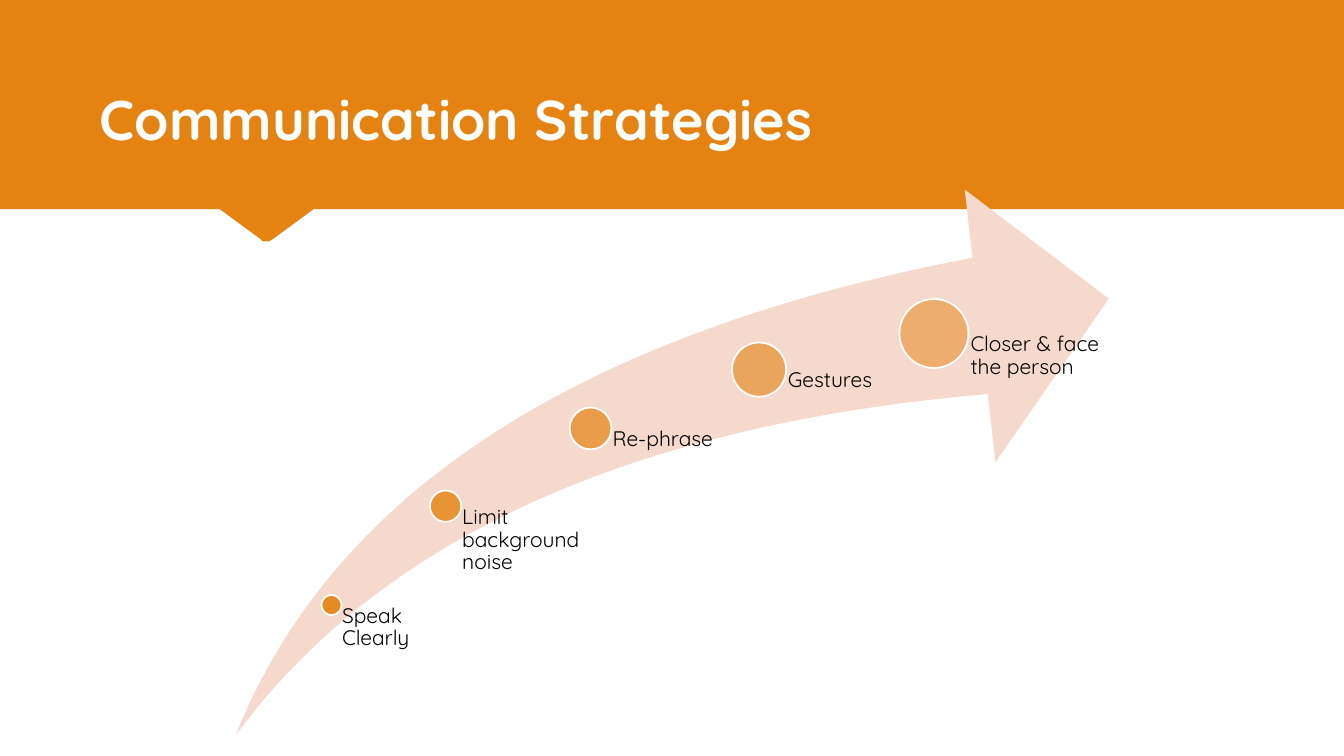
"""Build the Communication Strategies slide with a rising arrow of five steps."""
from lxml import etree
from pptx import Presentation
from pptx import util as u
from pptx.dml.color import RGBColor
from pptx.enum import shapes, text
from pptx.oxml.ns import qn

WIDTH, HEIGHT = 960, 540
FONT = "Quicksand"
COLORS = {"orange": "E48312", "arrow": "F5D9CC", "title": "FEFEFE",
          "white": "FFFFFF", "black": "000000"}
TITLE = "Communication Strategies"
BANNER = [(WIDTH, 0), (0, 0), (0, 148.7), (157, 148.7), (187, 171.2),
          (188.5, 172), (190.5, 172.3), (192.5, 172), (194, 171.2),
          (224.2, 148.7), (WIDTH, 148.7)]
ARROW = (168.5, 135.4, 623.5, 389.5)
STEPS = [
    ("Speak Clearly", 236.8, 432.2, 14.3, 81.4),
    ("Limit background noise", 318.3, 361.6, 22.4, 103.7),
    ("Re-phrase", 421.8, 306, 29.9, 120.2),
    ("Gestures", 542.2, 264, 38.7, 124.7),
    ("Closer & face the person", 667.1, 238.2, 49.3, 124.7),
]
FIRST_ALPHA, ALPHA_STEP = 90, 10
INSET_RATIO = 0.53


def color(name):
    """Return the named colour."""
    return RGBColor.from_string(COLORS[name])


def paint(shape, fill, line=None, weight=0.75, alpha=100):
    """Set the fill, outline and opacity of a shape."""
    shape.shadow.inherit = False
    shape.fill.solid()
    shape.fill.fore_color.rgb = color(fill)
    if alpha < 100:
        tint = shape._element.spPr.find(qn("a:solidFill"))[0]
        etree.SubElement(tint, qn("a:alpha"), val=str(alpha * 1000))
    if line:
        shape.line.color.rgb = color(line)
        shape.line.width = u.Pt(weight)
    else:
        shape.line.fill.background()


def add_text(page, words, area, *, size, ink, bold=False, spacing=1,
             anchor=text.MSO_ANCHOR.TOP, insets=(0, 0, 0, 0)):
    """Add a wrapped text box holding one paragraph."""
    box = page.shapes.add_textbox(*map(u.Pt, area))
    frame = box.text_frame
    frame.word_wrap = True
    frame.vertical_anchor = anchor
    (frame.margin_left, frame.margin_top,
     frame.margin_right, frame.margin_bottom) = map(u.Pt, insets)
    para = frame.paragraphs[0]
    para.line_spacing = spacing
    span = para.add_run()
    span.text = words
    span.font.name = FONT
    span.font.size = u.Pt(size)
    span.font.bold = bold
    span.font.color.rgb = color(ink)


def add_step(page, index, step):
    """Add one dot on the arrow and its label."""
    label, x, y, size, width = step
    corner = (x - size / 2, y - size / 2, size, size)
    dot = page.shapes.add_shape(shapes.MSO_SHAPE.OVAL, *map(u.Pt, corner))
    paint(dot, "orange", "white", 1.25, FIRST_ALPHA - ALPHA_STEP * index)
    bottom = ARROW[1] + ARROW[3]
    add_text(page, label, (x, y, width, bottom - y), size=15, ink="black",
             spacing=0.9, insets=(size * INSET_RATIO, 0, 0, 0))


def main():
    """Create the deck and save it."""
    deck = Presentation()
    deck.slide_width, deck.slide_height = u.Pt(WIDTH), u.Pt(HEIGHT)
    page = deck.slides.add_slide(deck.slide_layouts[6])

    outline = page.shapes.build_freeform(*BANNER[0], scale=u.Pt(1))
    outline.add_line_segments(BANNER[1:], close=True)
    paint(outline.convert_to_shape(), "orange", "orange")

    arrow = page.shapes.add_shape(shapes.MSO_SHAPE.SWOOSH_ARROW, *map(u.Pt, ARROW))
    arrow.adjustments[0] = arrow.adjustments[1] = 0.25
    paint(arrow, "arrow")

    for index, step in enumerate(STEPS):
        add_step(page, index, step)

    add_text(page, TITLE, (64.1, 35.3, 832.3, 76.3), size=40, ink="title", bold=True,
             anchor=text.MSO_ANCHOR.BOTTOM, insets=(7.2, 3.6, 7.2, 3.6))
    deck.save("out.pptx")


if __name__ == "__main__":
    main()
